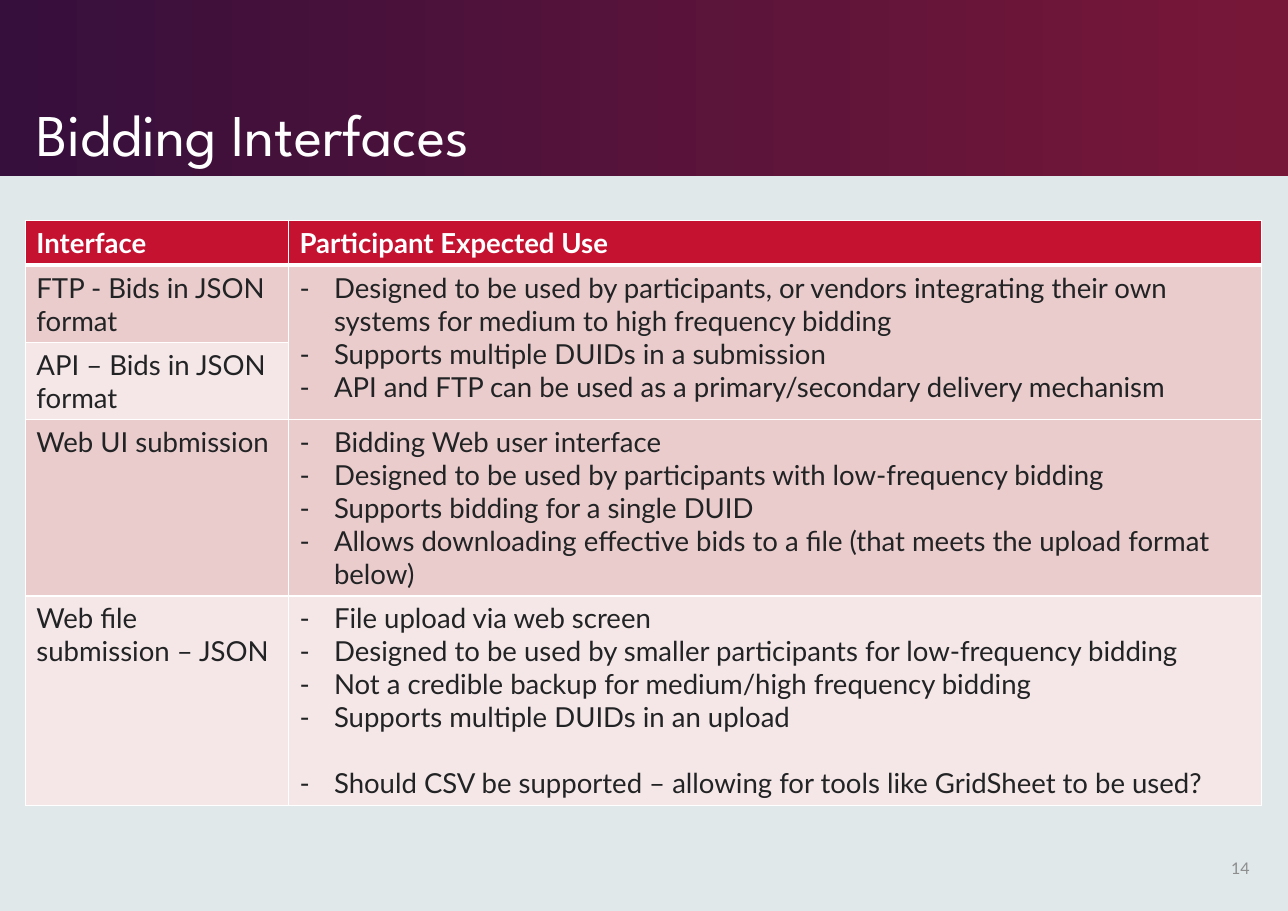
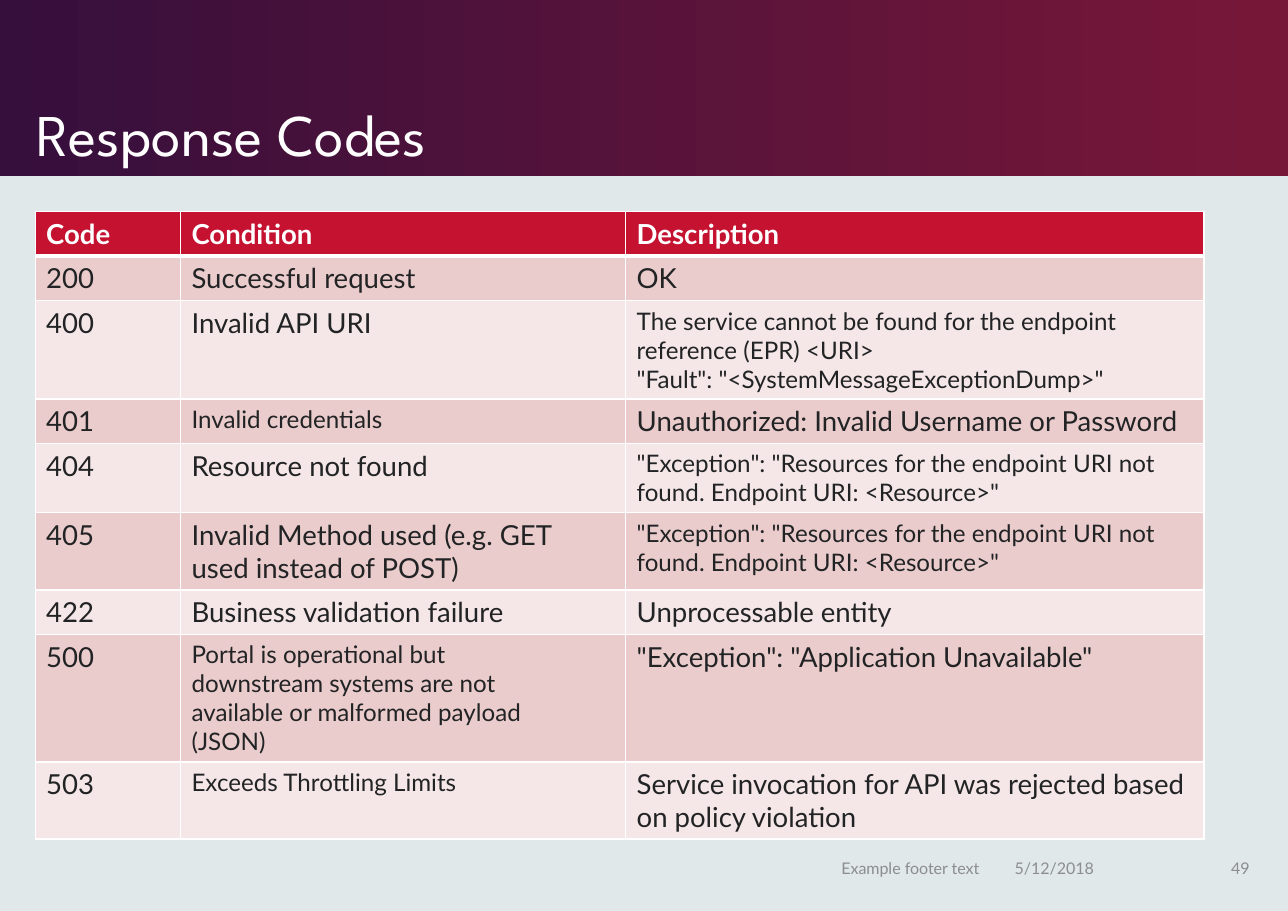
from dataclasses import dataclass
from typing import NamedTuple

from lxml.etree import SubElement
from pptx import Presentation
from pptx.dml.color import RGBColor
from pptx.enum.shapes import MSO_SHAPE
from pptx.enum.text import MSO_ANCHOR, PP_ALIGN
from pptx.oxml.ns import qn
from pptx.util import Pt


@dataclass(frozen=True)
class Theme:
    page: str = "E0E8EA"
    band_start: str = "360F3C"
    band_end: str = "771738"
    white: str = "FFFFFF"
    header: str = "C41230"
    row_dark: str = "EACCCD"
    row_light: str = "F5E7E8"
    ink: str = "222324"
    muted: str = "8D8D8E"
    title_font: str = "League Spartan"
    body_font: str = "Lato"
    title_size: float = 38.6
    body_size: float = 18
    small_size: float = 15.8
    footer_size: float = 10.5
    rule: float = 1
    header_rule: float = 3
    dash_indent: float = 22.5
    line_gap: float = 21.6


class Box(NamedTuple):
    left: float
    top: float
    width: float
    height: float

    def lengths(self):
        return [Pt(value) for value in self]


@dataclass(frozen=True)
class Entry:
    text: str
    size: float
    dashed: bool = False


THEME = Theme()
PAGE = Box(0, 0, 841.68, 595.44)
BAND = Box(0, 0, PAGE.width, 115.2)
FOOTER = Box(278.6, 551.5, 545.1, 31.7)


def body(text):
    return Entry(text, THEME.body_size)


def small(text):
    return Entry(text, THEME.small_size)


def dashes(*lines):
    return Entry("\n".join(lines), THEME.body_size, True)


def rgb(value):
    return RGBColor.from_string(value)


def style_text(frame, font, size, color, bold=False):
    for paragraph in frame.paragraphs:
        for run in paragraph.runs:
            run.font.name = font
            run.font.size = Pt(size)
            run.font.color.rgb = rgb(color)
            run.font.bold = bold


def add_label(slide, box, text, font, size, color, anchor, align=PP_ALIGN.LEFT):
    frame = slide.shapes.add_textbox(*box.lengths()).text_frame
    frame.word_wrap = True
    frame.vertical_anchor = anchor
    frame.text = text
    frame.paragraphs[0].alignment = align
    style_text(frame, font, size, color)
    return frame


def add_title_band(slide, box, title):
    band = slide.shapes.add_shape(MSO_SHAPE.RECTANGLE, *box.lengths())
    band.shadow.inherit = False
    band.line.fill.background()
    band.fill.gradient()
    band.fill.gradient_angle = 0
    ends = ((0, THEME.band_start), (0.99, THEME.band_end))
    for stop, (position, color) in zip(band.fill.gradient_stops, ends):
        stop.position = position
        stop.color.rgb = rgb(color)
    title_box = Box(box.left + 16.6, box.top + 11.5, box.width - 65, box.height - 12.2)
    frame = add_label(slide, title_box, title, THEME.title_font, THEME.title_size,
                      THEME.white, MSO_ANCHOR.BOTTOM)
    frame.paragraphs[0].line_spacing = 0.9


def add_footer(slide, box, number, date=None, note=None):
    parts = (
        (note, 0, 368.6, PP_ALIGN.RIGHT),
        (date, 377.4, 119.5, PP_ALIGN.LEFT),
        (number, box.width - 39.6, 39.6, PP_ALIGN.RIGHT),
    )
    for text, offset, width, align in parts:
        if text:
            part_box = Box(box.left + offset, box.top, width, box.height)
            add_label(slide, part_box, text, THEME.body_font, THEME.footer_size,
                      THEME.muted, MSO_ANCHOR.MIDDLE, align)


def add_cell_rules(cell, row):
    widths = {
        "a:lnL": THEME.rule,
        "a:lnR": THEME.rule,
        "a:lnT": THEME.header_rule if row == 1 else THEME.rule,
        "a:lnB": THEME.header_rule if row == 0 else THEME.rule,
    }
    properties = cell._tc.get_or_add_tcPr()
    for side, width in widths.items():
        rule = SubElement(properties, qn(side), w=str(Pt(width)))
        paint = SubElement(rule, qn("a:solidFill"))
        SubElement(paint, qn("a:srgbClr"), val=THEME.white)


def add_dash(paragraph):
    properties = paragraph._p.get_or_add_pPr()
    indent = Pt(THEME.dash_indent)
    properties.set("marL", str(indent))
    properties.set("indent", str(-indent))
    SubElement(properties, qn("a:buFont"), typeface=THEME.body_font)
    SubElement(properties, qn("a:buChar"), char="-")


def fill_cell(cell, row, entry):
    heading = row == 0
    banding = THEME.row_dark if row % 2 else THEME.row_light
    add_cell_rules(cell, row)
    cell.fill.solid()
    cell.fill.fore_color.rgb = rgb(THEME.header if heading else banding)
    frame = cell.text_frame
    frame.text = entry.text
    if entry.dashed:
        for paragraph in frame.paragraphs:
            add_dash(paragraph)
    style_text(frame, THEME.body_font, entry.size,
               THEME.white if heading else THEME.ink, heading)


def add_grid(slide, box, widths, heights, entries):
    frame = slide.shapes.add_table(len(heights), len(widths), *box.lengths())
    grid = frame.table
    for column, width in zip(grid.columns, widths):
        column.width = Pt(width)
    for line, height in zip(grid.rows, heights):
        line.height = Pt(height)
    for row, line in enumerate(entries):
        for column, entry in enumerate(line):
            if entry:
                fill_cell(grid.cell(row, column), row, entry)
    return grid


def add_page(deck, title, number, date=None, note=None):
    slide = deck.slides.add_slide(deck.slide_layouts[6])
    slide.background.fill.solid()
    slide.background.fill.fore_color.rgb = rgb(THEME.page)
    add_title_band(slide, BAND, title)
    add_footer(slide, FOOTER, number, date, note)
    return slide


def add_bidding_interfaces(deck):
    slide = add_page(deck, "Bidding Interfaces", "14")
    entries = [
        [body("Interface"), body("Participant Expected Use")],
        [body("FTP - Bids in JSON format"), dashes(
            "Designed to be used by participants, or vendors integrating their own "
            "systems for medium to high frequency bidding",
            "Supports multiple DUIDs in a submission",
            "API and FTP can be used as a primary/secondary delivery mechanism")],
        [body("API – Bids in JSON format"), None],
        [body("Web UI submission"), dashes(
            "Bidding Web user interface",
            "Designed to be used by participants with low-frequency bidding",
            "Supports bidding for a single DUID",
            "Allows downloading effective bids to a file (that meets the upload format below)")],
        [body("Web file submission – JSON"), dashes(
            "File upload via web screen",
            "Designed to be used by smaller participants for low-frequency bidding",
            "Not a credible backup for medium/high frequency bidding",
            "Supports multiple DUIDs in an upload",
            "Should CSV be supported – allowing for tools like GridSheet to be used?")],
    ]
    grid = add_grid(slide, Box(16.6, 144, 807.8, 382.3), (172, 635.8),
                    (29.5, 50.4, 50.4, 115.2, 136.8), entries)
    grid.cell(1, 1).merge(grid.cell(2, 1))
    csv_question = grid.cell(4, 1).text_frame.paragraphs[-1]
    csv_question.space_before = Pt(THEME.line_gap)


def add_response_codes(deck):
    slide = add_page(deck, "Response Codes", "49", "5/12/2018", "Example footer text")
    missing = small('"Exception": "Resources for the endpoint URI not found. '
                    'Endpoint URI: <Resource>"')
    entries = [
        [body("Code"), body("Condition"), body("Description")],
        [body("200"), body("Successful request"), body("OK")],
        [body("400"), body("Invalid API URI"), small(
            "The service cannot be found for the endpoint reference (EPR) <URI>\n"
            '"Fault": "<SystemMessageExceptionDump>"')],
        [body("401"), small("Invalid credentials"),
         body("Unauthorized: Invalid Username or Password")],
        [body("404"), body("Resource not found"), missing],
        [body("405"), body("Invalid Method used (e.g. GET used instead of POST)"), missing],
        [body("422"), body("Business validation failure"), body("Unprocessable entity")],
        [body("500"), small(
            "Portal is operational but\ndownstream systems are not\n"
            "available or malformed payload\n(JSON)"),
         body('"Exception": "Application Unavailable"')],
        [body("503"), small("Exceeds Throttling Limits"),
         body("Service invocation for API was rejected based on policy violation")],
    ]
    add_grid(slide, Box(23, 138.2, 763.9, 410.6), (95, 290.9, 378),
             (29.2, 29.2, 64.2, 29.2, 45.2, 50.4, 29.2, 83.2, 50.4), entries)


def main():
    deck = Presentation()
    deck.slide_width = Pt(PAGE.width)
    deck.slide_height = Pt(PAGE.height)
    add_bidding_interfaces(deck)
    add_response_codes(deck)
    deck.save("out.pptx")


if __name__ == "__main__":
    main()
